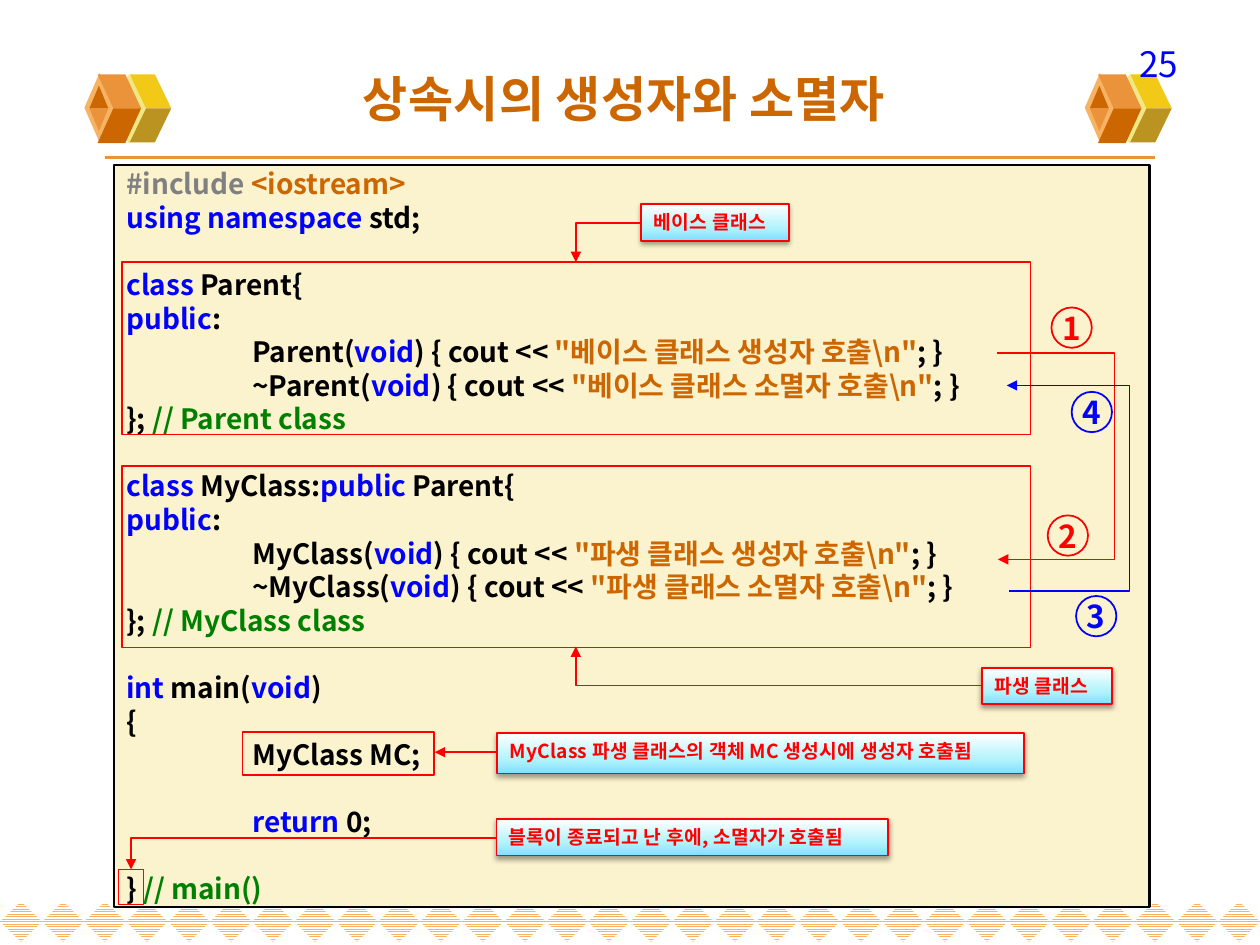
from dataclasses import dataclass

from lxml.etree import SubElement
from pptx import Presentation
from pptx.dml.color import RGBColor
from pptx.enum.dml import MSO_PATTERN
from pptx.enum.shapes import MSO_CONNECTOR, MSO_SHAPE
from pptx.enum.text import MSO_ANCHOR, PP_ALIGN
from pptx.oxml import parse_xml
from pptx.oxml.ns import nsdecls, qn
from pptx.util import Emu, Inches, Pt

# The slide is a grid of 100 columns by 75 rows of square cells.
COLUMNS, ROWS = 100, 75
CELL = Inches(0.1)
FONT = "Noto Sans CJK KR"
LINE_RATIO = 1.2
BLACK, GRAY, GREEN = "000000", "808080", "008000"
RED, BLUE, ORANGE = "FF0000", "0000FF", "CC6600"
AMBER, PEACH, CREAM = "EB933B", "F5B363", "FBF2CE"

Run = tuple[str, str]
Point = tuple[float, float]


@dataclass(frozen=True)
class Box:
    left: float
    top: float
    width: float
    height: float

    def lengths(self) -> list[Emu]:
        return [cells(n) for n in (self.left, self.top, self.width, self.height)]


@dataclass(frozen=True)
class Callout:
    text: str
    box: Box


@dataclass(frozen=True)
class Step:
    number: str
    left: float
    top: float
    color: str


@dataclass(frozen=True)
class Arrow:
    start: Point
    end: Point
    preset: str = "line"
    color: str = RED
    arrowhead: str = "tailEnd"
    bend: float = 0  # column of the middle segment of a bentConnector3


@dataclass(frozen=True)
class CodeLine:
    runs: list[Run]
    gap: bool = False


def cells(count: float) -> Emu:
    return Emu(round(count * CELL))


def rgb(color: str) -> RGBColor:
    return RGBColor.from_string(color)


def add_run(paragraph, text: str, size: float, color: str, bold: bool = True,
            spacing: int = 0) -> None:
    """Add a run; spacing is in hundredths of a point between letters."""
    run = paragraph.add_run()
    run.text = text
    run.font.name, run.font.size, run.font.bold = FONT, Pt(size), bold
    run.font.color.rgb = rgb(color)
    SubElement(run.font._element, qn("a:ea")).set("typeface", FONT)
    if spacing:
        run.font._element.set("spc", str(spacing))


def add_box(slide, box: Box, preset=MSO_SHAPE.RECTANGLE, fill: str = "",
            line: str = "", line_width: float = 1):
    shape = slide.shapes.add_shape(preset, *box.lengths())
    paint(shape, fill, line, line_width)
    return shape


def paint(shape, fill: str, line: str = "", line_width: float = 1) -> None:
    shape.shadow.inherit = False
    if fill:
        shape.fill.solid()
        shape.fill.fore_color.rgb = rgb(fill)
    else:
        shape.fill.background()
    if line:
        shape.line.color.rgb = rgb(line)
        shape.line.width = Pt(line_width)
    else:
        shape.line.fill.background()


def add_polygon(slide, points: list[Point], color: str) -> None:
    corners = [(cells(x), cells(y)) for x, y in points]
    builder = slide.shapes.build_freeform(*corners[0], scale=1.0)
    builder.add_line_segments(corners[1:], close=True)
    paint(builder.convert_to_shape(), color)


def add_emblem(slide, left: float) -> None:
    """Draw a box-like emblem whose lower half mirrors its upper half."""
    middle = 8.6

    def side(start: float, width: float, slant: float, rise: float) -> list[Point]:
        return [(left + start, middle), (left + start + width, middle),
                (left + start + width - slant, middle + rise),
                (left + start - slant, middle + rise)]

    def tip(rise: float) -> list[Point]:
        return [(left + 0.4, middle), (left + 1.9, middle), (left + 1.15, middle + rise)]

    add_box(slide, Box(left + 1.9, 5.9, 3.3, 5.5), MSO_SHAPE.DIAMOND, "F1E785")
    add_polygon(slide, side(4.9, 2, 1.3, -2.7), "F3C917")
    add_polygon(slide, side(4.9, 2, 1.3, 2.7), "BB9321")
    add_box(slide, Box(left, 5.8, 2.4, 5.5), MSO_SHAPE.DIAMOND, PEACH)
    add_polygon(slide, side(2.3, 2.2, 1.25, -2.7), AMBER)
    add_polygon(slide, side(2.3, 2.2, 1.25, 2.75), ORANGE)
    add_polygon(slide, tip(-1.8), ORANGE)
    add_polygon(slide, tip(1.8), AMBER)


def add_diamond_border(slide, count: int = 30) -> None:
    width = COLUMNS / count
    for index in range(count):
        shape = add_box(slide, Box(index * width, 71.55, width, 3.2), MSO_SHAPE.DIAMOND)
        shape.fill.patterned()
        shape.fill.pattern = MSO_PATTERN.NARROW_HORIZONTAL
        shape.fill.fore_color.rgb = rgb(PEACH)
        shape.fill.back_color.rgb = rgb("FFFFFF")


def add_callout(slide, callout: Callout) -> None:
    shape = add_box(slide, callout.box, fill=CREAM, line=RED)
    properties = shape._element.spPr
    stops = "".join(f'<a:gs pos="{position}000"><a:srgbClr val="{color}"/></a:gs>'
                    for position, color in ((0, "81DEFF"), (35, "B2F3FC"), (100, "FFFFFF")))
    properties.replace(properties.find(qn("a:solidFill")), parse_xml(
        f'<a:gradFill {nsdecls("a")}><a:gsLst>{stops}</a:gsLst>'
        '<a:lin ang="16200000" scaled="1"/></a:gradFill>'))
    properties.find(qn("a:effectLst")).append(parse_xml(
        f'<a:outerShdw {nsdecls("a")} blurRad="{Pt(3.1)}" dist="{Pt(1.6)}" dir="5400000" '
        'rotWithShape="0"><a:srgbClr val="000000"><a:alpha val="38000"/></a:srgbClr>'
        '</a:outerShdw>'))
    frame = shape.text_frame
    frame.word_wrap, frame.vertical_anchor = False, MSO_ANCHOR.TOP
    paragraph = frame.paragraphs[0]
    paragraph.alignment, paragraph.line_spacing = PP_ALIGN.LEFT, Pt(11 * LINE_RATIO)
    add_run(paragraph, callout.text, 11, RED, spacing=10)


def add_step(slide, step: Step) -> None:
    shape = add_box(slide, Box(step.left, step.top, 3.2, 3.2), MSO_SHAPE.OVAL, line=step.color)
    frame = shape.text_frame
    frame.word_wrap, frame.vertical_anchor = False, MSO_ANCHOR.MIDDLE
    frame.paragraphs[0].alignment = PP_ALIGN.CENTER
    add_run(frame.paragraphs[0], step.number, 18, step.color)


def add_arrow(slide, arrow: Arrow, width: float = 1) -> None:
    kind = MSO_CONNECTOR.STRAIGHT if arrow.preset == "line" else MSO_CONNECTOR.ELBOW
    ends = [cells(n) for n in (*arrow.start, *arrow.end)]
    connector = slide.shapes.add_connector(kind, *ends)
    connector.line.color.rgb = rgb(arrow.color)
    connector.line.width = Pt(width)
    properties = connector._element.spPr
    SubElement(properties, qn("a:effectLst"))
    geometry = properties.find(qn("a:prstGeom"))
    geometry.set("prst", arrow.preset)
    if arrow.preset == "bentConnector2":  # a half turn stands for the leftward flip
        frame = properties.find(qn("a:xfrm"))
        frame.set("rot", "10800000")
        frame.set("flipV", "0" if frame.get("flipV") == "1" else "1")
        frame.set("flipH", "0")
    if arrow.bend:
        share = (arrow.bend - arrow.start[0]) / (arrow.end[0] - arrow.start[0])
        guide = SubElement(geometry.find(qn("a:avLst")), qn("a:gd"))
        guide.set("name", "adj1")
        guide.set("fmla", f"val {round(share * 100000)}")
    if arrow.arrowhead:
        SubElement(connector.line._get_or_add_ln(), qn(f"a:{arrow.arrowhead}")).set("type", "triangle")


def class_lines(name: str, heading: list[Run], label: str) -> list[CodeLine]:
    members = [CodeLine([(f"\t{prefix}{name}(", BLACK), ("void", BLUE), (") { cout << ", BLACK),
                         (f'"{label} 클래스 {role} 호출\\n"', ORANGE), ("; }", BLACK)])
               for prefix, role in (("", "생성자"), ("~", "소멸자"))]
    return [CodeLine([("class ", BLUE), *heading], gap=True),
            CodeLine([("public", BLUE), (":", BLACK)]), *members,
            CodeLine([("}; ", BLACK), (f"// {name} class", GREEN)])]


CODE = [
    CodeLine([("#include ", GRAY), ("<iostream>", ORANGE)]),
    CodeLine([("using namespace", BLUE), (" std;", BLACK)]),
    *class_lines("Parent", [("Parent{", BLACK)], "베이스"),
    *class_lines("MyClass", [("MyClass:", BLACK), ("public", BLUE), (" Parent{", BLACK)], "파생"),
    CodeLine([("int", BLUE), (" main(", BLACK), ("void", BLUE), (")", BLACK)], gap=True),
    CodeLine([("{", BLACK)]),
    CodeLine([("\tMyClass MC;", BLACK)]),
    CodeLine([("\t", BLACK), ("return", BLUE), (" 0;", BLACK)], gap=True),
    CodeLine([("} ", BLACK), ("// main()", GREEN)], gap=True),
]
CALLOUTS = [
    Callout("베이스 클래스", Box(50.9, 16.2, 11.7, 2.9)),
    Callout("파생 클래스", Box(77.95, 53, 10.3, 2.9)),
    Callout("MyClass 파생 클래스의 객체 MC 생성시에 생성자 호출됨", Box(39.45, 58.2, 41.8, 3.2)),
    Callout("블록이 종료되고 난 후에, 소멸자가 호출됨", Box(39.4, 65, 31.1, 2.9)),
]
FRAMES = [Box(9.7, 20.8, 72.1, 13.7), Box(19.25, 58.1, 15.2, 3.4),
          Box(9.7, 37, 72.1, 14.4), Box(9.4, 69, 2, 2.8)]
STEPS = [Step("1", 83.45, 24.4, RED), Step("2", 83.15, 40.9, RED),
         Step("4", 85.05, 31.1, BLUE), Step("3", 85.4, 47.3, BLUE)]
ARROWS = [
    Arrow((79.1, 28), (79.2, 44.4), "bentConnector3", bend=88.6),
    Arrow((79.9, 30.6), (80.1, 46.9), "bentConnector3", BLUE, "headEnd", bend=89.6),
    Arrow((39.4, 59.7), (34.5, 59.7)),
    Arrow((50.9, 17.7), (45.7, 20.8), "bentConnector2"),
    Arrow((77.9, 54.4), (45.7, 51.3), "bentConnector2"),
    Arrow((39.4, 66.5), (10.4, 69), "bentConnector2"),
]


def add_title(slide) -> None:
    title = slide.shapes.title
    title.left, title.top, title.width, title.height = Box(5, 3, 90, 9.5).lengths()
    title.text_frame.vertical_anchor = MSO_ANCHOR.MIDDLE
    title.text_frame.paragraphs[0].alignment = PP_ALIGN.CENTER
    add_run(title.text_frame.paragraphs[0], "상속시의 생성자와 소멸자 ", 28, ORANGE, spacing=25)


def add_page_number(slide) -> None:
    frame = slide.shapes.add_textbox(*Box(71.2, 2.85, 23.3, 3).lengths()).text_frame
    frame.word_wrap = True
    frame.paragraphs[0].alignment = PP_ALIGN.RIGHT
    add_run(frame.paragraphs[0], "25", 20, BLUE, bold=False)


def add_code(slide) -> None:
    frame = add_box(slide, Box(9.05, 13.1, 82.2, 58.9), fill=CREAM, line=BLACK,
                    line_width=1.5).text_frame
    frame.word_wrap, frame.vertical_anchor = True, MSO_ANCHOR.MIDDLE
    pitch = Pt(16 * LINE_RATIO)
    for index, line in enumerate(CODE):
        paragraph = frame.add_paragraph() if index else frame.paragraphs[0]
        paragraph.alignment, paragraph.line_spacing = PP_ALIGN.LEFT, pitch
        paragraph.space_before = pitch if line.gap else Pt(0)
        tabs = SubElement(paragraph._p.get_or_add_pPr(), qn("a:tabLst"))
        tab = SubElement(tabs, qn("a:tab"))
        tab.set("pos", str(cells(10)))
        tab.set("algn", "l")
        for text, color in line.runs:
            add_run(paragraph, text, 16, color)


def main() -> None:
    presentation = Presentation()
    presentation.slide_width, presentation.slide_height = cells(COLUMNS), cells(ROWS)
    slide = presentation.slides.add_slide(presentation.slide_layouts[5])
    add_diamond_border(slide)
    add_arrow(slide, Arrow((8.3, 12.5), (91.7, 12.5), color=AMBER, arrowhead=""), 2.25)
    for left in (6.7, 86.1):
        add_emblem(slide, left)
    add_page_number(slide)
    add_title(slide)
    add_code(slide)
    for callout in CALLOUTS:
        add_callout(slide, callout)
    for frame in FRAMES:
        add_box(slide, frame, line=RED)
    for step in STEPS:
        add_step(slide, step)
    for arrow in ARROWS:
        add_arrow(slide, arrow)
    presentation.save("out.pptx")


if __name__ == "__main__":
    main()
